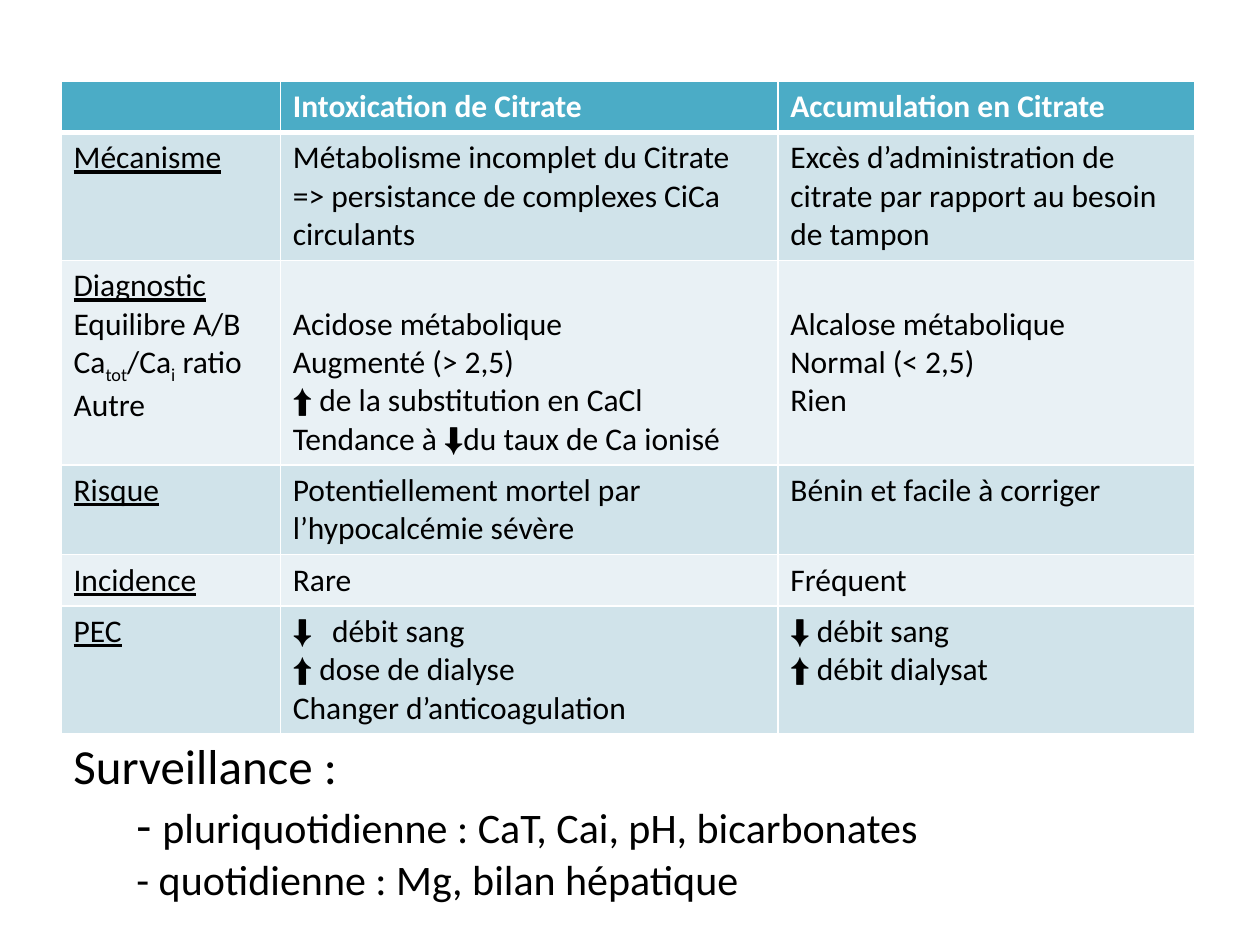
from lxml import etree
from pptx import Presentation
from pptx.dml import color
from pptx.oxml import ns
from pptx.util import Cm, Pt

WHITE = color.RGBColor(0xFF, 0xFF, 0xFF)
BLACK = color.RGBColor(0x00, 0x00, 0x00)
TEAL = color.RGBColor(0x4B, 0xAC, 0xC6)
BAND_DARK = color.RGBColor(0xD0, 0xE3, 0xEA)
BAND_LIGHT = color.RGBColor(0xE9, 0xF1, 0xF5)

ARROWS = ("⬆", "⬇")
SUBSCRIPTS = ("tot", "i")
COLUMN_WIDTHS = (4.42, 10.03, 8.41)
ROW_HEIGHTS = (1.03, 2.57, 4.09, 1.8, 1.03, 2.57)
BULLETED = "débit sang"

ROWS = [
    ([], ["Intoxication de Citrate"], ["Accumulation en Citrate"]),
    (
        ["Mécanisme"],
        ["Métabolisme incomplet du Citrate => persistance de complexes CiCa circulants"],
        ["Excès d’administration de citrate par rapport au besoin de tampon"],
    ),
    (
        ["Diagnostic", "Equilibre A/B", "Ca|tot|/Ca|i| ratio", "Autre"],
        [
            "Acidose métabolique",
            "Augmenté (> 2,5)",
            "⬆| de la substitution en CaCl",
            "Tendance à |⬇|du taux de Ca ionisé",
        ],
        ["Alcalose métabolique", "Normal (< 2,5)", "Rien"],
    ),
    (
        ["Risque"],
        ["Potentiellement mortel par l’hypocalcémie sévère"],
        ["Bénin et facile à corriger"],
    ),
    (["Incidence"], ["Rare"], ["Fréquent"]),
    (
        ["PEC"],
        [BULLETED, "⬆| dose de dialyse", "Changer d’anticoagulation"],
        ["⬇| débit sang", "⬆| débit dialysat"],
    ),
]


def add_span(para, words, size, ink=BLACK):
    span = para.add_run()
    span.text = words
    span.font.size = Pt(size)
    span.font.name = "Arial" if words in ARROWS else "Calibri"
    span.font.color.rgb = ink
    if words in SUBSCRIPTS:
        span.font._element.set("baseline", "-25000")
    return span


def set_borders(cell, top, bottom):
    properties = cell._tc.get_or_add_tcPr()
    sides = (("lnL", 1), ("lnR", 1), ("lnT", top), ("lnB", bottom))
    for position, (side, width) in enumerate(sides):
        line = etree.Element(ns.qn(f"a:{side}"), w=str(Pt(width)))
        fill = etree.SubElement(line, ns.qn("a:solidFill"))
        etree.SubElement(fill, ns.qn("a:srgbClr"), val=str(WHITE))
        properties.insert(position, line)


deck = Presentation()
deck.slide_width = Cm(25.4)
deck.slide_height = Cm(19.05)
page = deck.slides.add_slide(deck.slide_layouts[6])

frame = page.shapes.add_table(
    len(ROWS), len(COLUMN_WIDTHS), Cm(1.23), Cm(1.64), Cm(sum(COLUMN_WIDTHS)), Cm(sum(ROW_HEIGHTS))
)
table = frame.table
table.horz_banding = False
for column, width in zip(table.columns, COLUMN_WIDTHS):
    column.width = Cm(width)
for row, height in zip(table.rows, ROW_HEIGHTS):
    row.height = Cm(height)

for r, row in enumerate(ROWS):
    header = r == 0
    for c, lines in enumerate(row):
        cell = table.cell(r, c)
        cell.fill.solid()
        cell.fill.fore_color.rgb = TEAL if header else (BAND_LIGHT, BAND_DARK)[r % 2]
        set_borders(cell, 3 if r == 1 else 1, 3 if header else 1)
        if row[0][:1] == ["Diagnostic"] and c > 0:
            cell.margin_top = Cm(0.9)
        for n, line in enumerate(lines):
            para = cell.text_frame.paragraphs[0] if n == 0 else cell.text_frame.add_paragraph()
            if line == BULLETED:
                properties = para._p.get_or_add_pPr()
                properties.set("marL", str(Cm(0.79)))
                properties.set("indent", str(Cm(-0.79)))
                etree.SubElement(properties, ns.qn("a:buFont"), typeface="Arial")
                etree.SubElement(properties, ns.qn("a:buChar"), char="⬇")
            for words in line.split("|"):
                span = add_span(para, words, 18, WHITE if header else BLACK)
                span.font.bold = header
                span.font.underline = c == 0 and n == 0

box = page.shapes.add_textbox(Cm(1.23), Cm(14.7), Cm(23.31), Cm(3.69))
box.text_frame.word_wrap = True
monitoring = [
    [("Surveillance :", 28)],
    [("\t- ", 28), ("pluriquotidienne : CaT, Cai, pH, bicarbonates", 24)],
    [("\t- quotidienne : Mg, bilan hépatique", 24)],
]
for n, spans in enumerate(monitoring):
    para = box.text_frame.paragraphs[0] if n == 0 else box.text_frame.add_paragraph()
    for words, size in spans:
        add_span(para, words, size)

deck.save("out.pptx")
